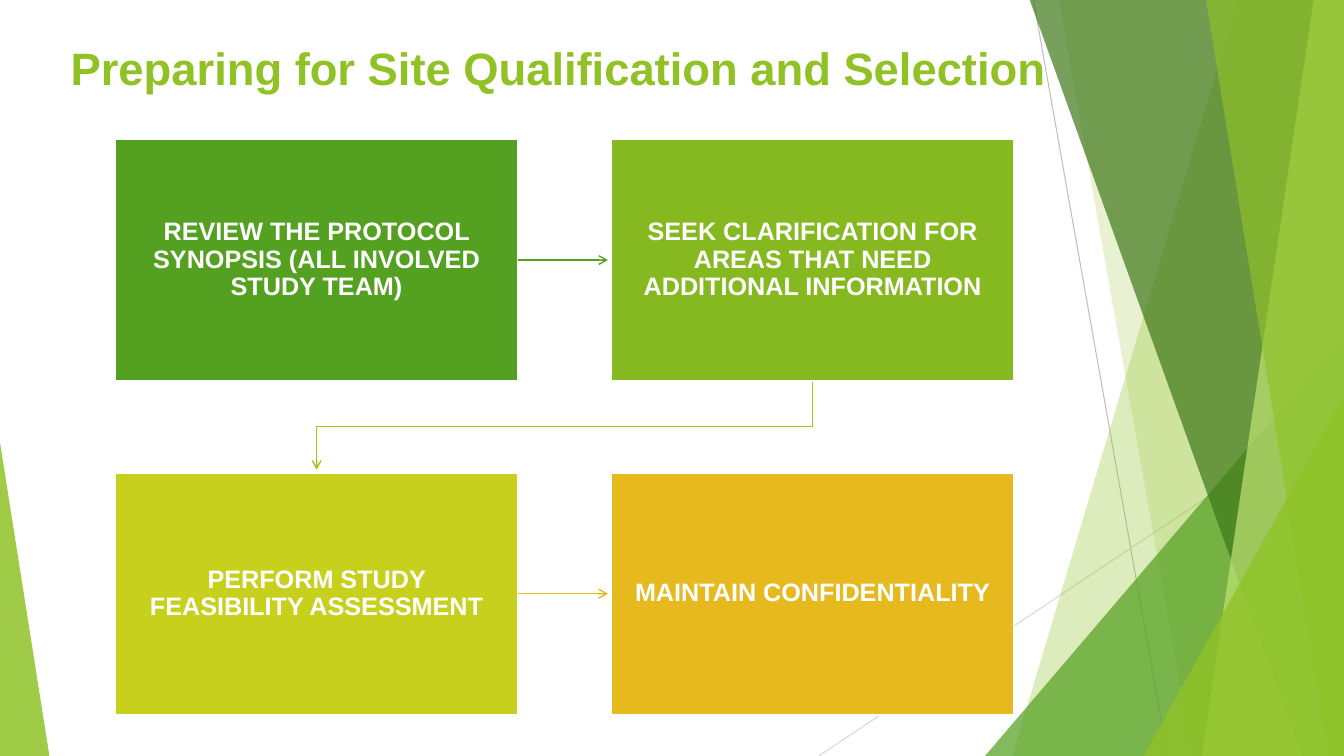
from lxml import etree
from pptx import Presentation
from pptx.dml.color import RGBColor
from pptx.enum.shapes import MSO_CONNECTOR, MSO_SHAPE
from pptx.enum.text import MSO_ANCHOR, MSO_AUTO_SIZE, PP_ALIGN
from pptx.oxml.ns import qn
from pptx.util import Inches, Pt

RECTANGLE, TRIANGLE = MSO_SHAPE.RECTANGLE, MSO_SHAPE.ISOSCELES_TRIANGLE
STRAIGHT = MSO_CONNECTOR.STRAIGHT
MIDDLE, CENTER, LEFT = MSO_ANCHOR.MIDDLE, PP_ALIGN.CENTER, PP_ALIGN.LEFT
NO_AUTOFIT = MSO_AUTO_SIZE.NONE

WHITE = RGBColor(0xFF, 0xFF, 0xFF)
GREY = RGBColor(0xBF, 0xBF, 0xBF)
PALE_GREY = RGBColor(0xD9, 0xD9, 0xD9)
LIME = RGBColor(0x90, 0xC2, 0x26)
PALE_LIME = RGBColor(0xC0, 0xE4, 0x74)
GREEN = RGBColor(0x54, 0xA0, 0x21)
DARK_GREEN = RGBColor(0x3F, 0x78, 0x19)
LEAF = RGBColor(0x86, 0xB8, 0x20)
YELLOW_GREEN = RGBColor(0xC7, 0xD0, 0x1D)
OLIVE = RGBColor(0xA5, 0xC4, 0x1F)
GOLD = RGBColor(0xE6, 0xB9, 0x1E)

WIDTH, HEIGHT = 13.33, 7.5

prs = Presentation()
prs.slide_width, prs.slide_height = Inches(WIDTH), Inches(HEIGHT)
slide = prs.slides.add_slide(prs.slide_layouts[5])
shapes = slide.shapes


def add_line(points, color, weight, arrow=False):
    """Draw a straight connector, or an open outline through several points."""
    corners = [(Inches(x), Inches(y)) for x, y in points]
    if len(corners) == 2:
        line = shapes.add_connector(STRAIGHT, *corners[0], *corners[1])
        etree.SubElement(line._element.spPr, qn("a:effectLst"))
    else:
        builder = shapes.build_freeform(*corners[0])
        builder.add_line_segments(corners[1:], close=False)
        line = builder.convert_to_shape()
        line.fill.background()
        line.shadow.inherit = False
    line.line.color.rgb = color
    line.line.width = Pt(weight)
    if arrow:
        ln = line._element.spPr.find(qn("a:ln"))
        etree.SubElement(ln, qn("a:tailEnd"), type="arrow")


def tint(facet, color, opacity):
    """Fill a facet with a see-through colour and no outline."""
    facet.shadow.inherit = False
    facet.line.fill.background()
    facet.fill.solid()
    facet.fill.fore_color.rgb = color
    srgb = facet._element.spPr.find(qn("a:solidFill")).find(qn("a:srgbClr"))
    etree.SubElement(srgb, qn("a:alpha"), val=str(opacity * 1000))


# Background facets: ("band", top left x, bottom left x) reach the right edge,
# ("corner", left, top, width, apex) stand on the bottom edge
add_line([(10.25, 0), (11.58, HEIGHT)], GREY, 0.75)
add_line([(WIDTH, 4.03), (8.12, HEIGHT)], PALE_GREY, 0.75)
facets = [
    ("band", (12.28, 10.04), LIME, 30),
    ("band", (10.5, 11.83), LIME, 20),
    ("corner", (9.77, 3.33, 3.56, 1), GREEN, 72),
    ("band", (10.21, 12.91), DARK_GREEN, 70),
    ("band", (13.03, 11.92), PALE_LIME, 70),
    ("band", (11.96, 13.18), LIME, 65),
    ("corner", (11.34, 3.93, 1.99, 1), LIME, 80),
    ("corner", (0, 4.39, 0.49, 0), LIME, 85),
]
for kind, geometry, color, opacity in facets:
    if kind == "band":
        top_x, bottom_x = geometry
        outline = shapes.build_freeform(Inches(top_x), Inches(-0.01))
        outline.add_line_segments([
            (Inches(x), Inches(y))
            for x, y in [(WIDTH, -0.01), (WIDTH, HEIGHT), (bottom_x, HEIGHT)]])
        facet = outline.convert_to_shape()
    else:
        left, top, width, apex = geometry
        facet = shapes.add_shape(TRIANGLE, Inches(left), Inches(top),
                                 Inches(width), Inches(HEIGHT - top))
        facet.adjustments[0] = apex
    tint(facet, color, opacity)

# Title, brought in front of the facets
title = shapes.title
shapes._spTree.append(title._element)
title.left, title.top = Inches(0.6), Inches(0.3)
title.width, title.height = Inches(10.01), Inches(0.8)
heading = title.text_frame
heading.text = "Preparing for Site Qualification and Selection"
heading.auto_size = NO_AUTOFIT
heading.word_wrap = True
heading.vertical_anchor = MIDDLE
heading_line = heading.paragraphs[0]
heading_line.alignment = LEFT
heading_line.line_spacing = 0.9
heading_line.font.name = "Arial"
heading_line.font.size = Pt(32.4)
heading_line.font.bold = True
heading_line.font.color.rgb = LIME

# Step boxes in a two by two grid
STEP_LEFT, STEP_TOP, STEP_W, STEP_H = 1.14, 1.38, 4, 2.4
PITCH_X, PITCH_Y = 4.92, 3.31
steps = [
    ("REVIEW THE PROTOCOL SYNOPSIS (ALL INVOLVED STUDY TEAM)", GREEN),
    ("SEEK CLARIFICATION FOR AREAS THAT NEED ADDITIONAL INFORMATION", LEAF),
    ("PERFORM STUDY FEASIBILITY ASSESSMENT", YELLOW_GREEN),
    ("MAINTAIN CONFIDENTIALITY", GOLD),
]
for i, (text, color) in enumerate(steps):
    row, column = divmod(i, 2)
    step = shapes.add_shape(
        RECTANGLE, Inches(STEP_LEFT + column * PITCH_X),
        Inches(STEP_TOP + row * PITCH_Y), Inches(STEP_W), Inches(STEP_H))
    step.shadow.inherit = False
    step.fill.solid()
    step.fill.fore_color.rgb = color
    step.line.color.rgb = WHITE
    step.line.width = Pt(1.5)
    frame = step.text_frame
    frame.text = text
    frame.word_wrap = True
    frame.vertical_anchor = MIDDLE
    frame.margin_left = frame.margin_right = Inches(0.2)
    frame.margin_top = frame.margin_bottom = Inches(0.21)
    label = frame.paragraphs[0]
    label.alignment = CENTER
    label.line_spacing = 0.9
    label.font.name = "Arial"
    label.font.size = Pt(18)
    label.font.bold = True
    label.font.color.rgb = WHITE

# Arrows from step to step
for row, color in enumerate([GREEN, GOLD]):
    y = STEP_TOP + STEP_H / 2 + row * PITCH_Y
    add_line([(5.14, y), (6.03, y)], color, 1, arrow=True)
add_line([(8.06, 3.79), (8.06, 4.23), (3.14, 4.23), (3.14, 4.66)],
         OLIVE, 1, arrow=True)

prs.save("out.pptx")
